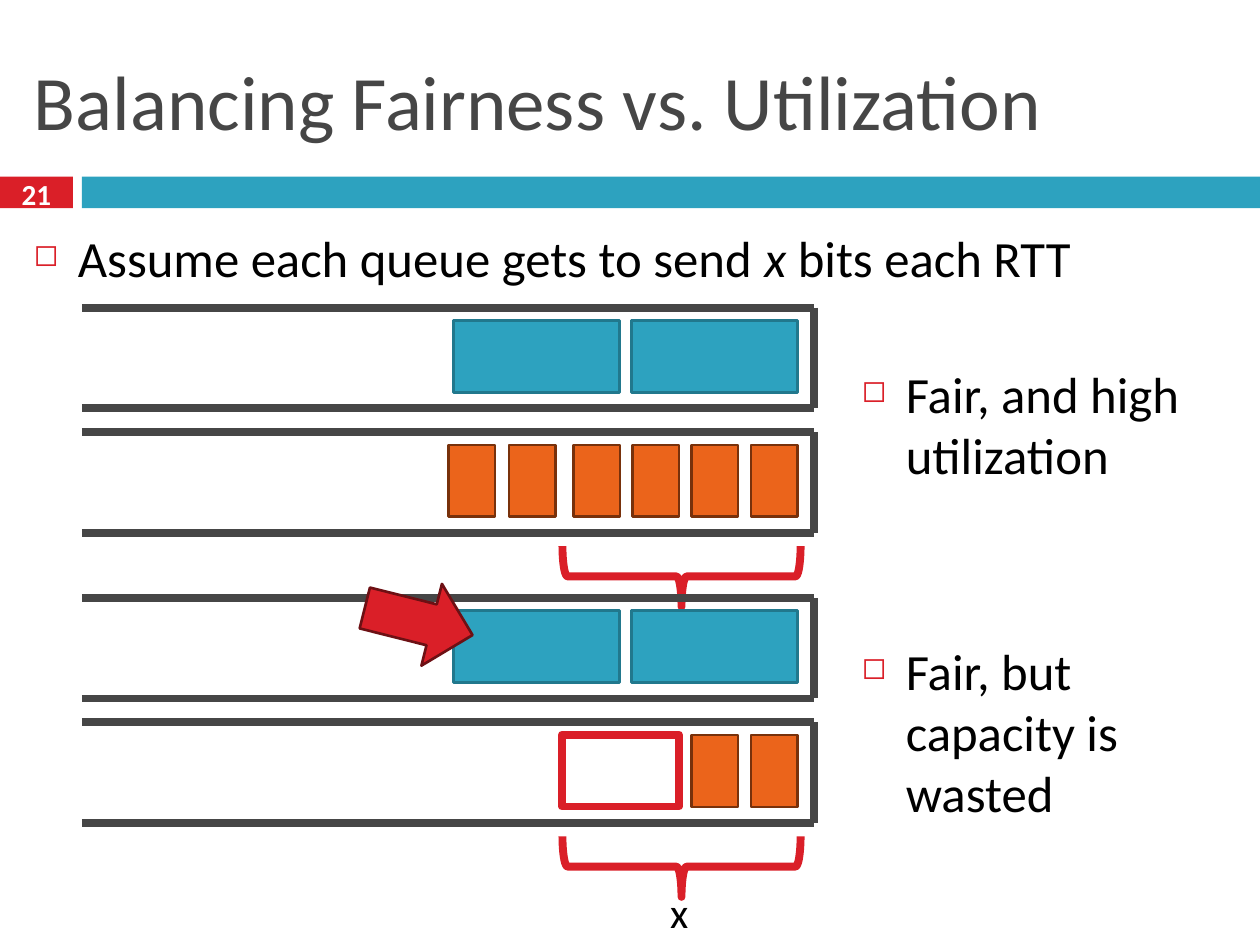
import pptx
import pptx.util
import pptx.dml.color
import pptx.enum.shapes
import pptx.enum.text
import pptx.oxml.ns
import lxml.etree

Cm = pptx.util.Cm
Pt = pptx.util.Pt
RGBColor = pptx.dml.color.RGBColor
SHAPES = pptx.enum.shapes.MSO_SHAPE
ANCHORS = pptx.enum.text.MSO_ANCHOR
qn = pptx.oxml.ns.qn

RED = RGBColor(0xDA, 0x1F, 0x28)
DARK_RED = RGBColor(0x6D, 0x10, 0x14)
TEAL = RGBColor(0x2D, 0xA2, 0xBF)
DARK_TEAL = RGBColor(0x21, 0x78, 0x8D)
ORANGE = RGBColor(0xEB, 0x64, 0x1B)
DARK_ORANGE = RGBColor(0x78, 0x31, 0x0B)
GRAY = RGBColor(0x46, 0x46, 0x46)
BLACK = RGBColor(0, 0, 0)
WHITE = RGBColor(0xFF, 0xFF, 0xFF)

deck = pptx.Presentation()
deck.slide_width = Cm(25.4)
deck.slide_height = Cm(19.05)
page = deck.slides.add_slide(deck.slide_layouts[5])


def write(text, place, box=None, size=29, color=BLACK, bold=None, italic="",
          align="LEFT", anchor="TOP", wrap=True, bullet=False):
    left, top, width, height = map(Cm, place)
    if box is None:
        box = page.shapes.add_textbox(left, top, width, height)
    box.left, box.top, box.width, box.height = left, top, width, height
    frame = box.text_frame
    frame.word_wrap = wrap
    frame.vertical_anchor = ANCHORS[anchor]
    para = frame.paragraphs[0]
    para.alignment = pptx.enum.text.PP_ALIGN[align]
    before, middle, after = text.partition(italic) if italic else (text, "", "")
    for part in filter(None, (before, middle, after)):
        span = para.add_run()
        span.text = part
        span.font.name = "Calibri"
        span.font.size = Pt(size)
        span.font.bold = bold
        span.font.italic = True if part == italic else None
        span.font.color.rgb = color
    if bullet:
        para.space_before = Pt(7)
        props = para._p.get_or_add_pPr()
        props.set("marL", str(Cm(0.89)))
        props.set("indent", str(-Cm(0.89)))
        tint = lxml.etree.SubElement(props, qn("a:buClr"))
        lxml.etree.SubElement(tint, qn("a:srgbClr"), val=str(RED))
        lxml.etree.SubElement(props, qn("a:buSzPct"), val="60000")
        lxml.etree.SubElement(props, qn("a:buChar"), char="◻")


def draw(kind, place, fill=None, line=None, weight=1.5, turn=0):
    shape = page.shapes.add_shape(kind, *map(Cm, place))
    shape.shadow.inherit = False
    shape.rotation = turn
    if fill is None:
        shape.fill.background()
    else:
        shape.fill.solid()
        shape.fill.fore_color.rgb = fill
    if line is None:
        shape.line.fill.background()
    else:
        shape.line.color.rgb = line
        shape.line.width = Pt(weight)


draw(SHAPES.RECTANGLE, (0, 3.56, 1.47, 0.64), fill=RED)
draw(SHAPES.RECTANGLE, (1.65, 3.56, 23.75, 0.64), fill=TEAL)
write("Balancing Fairness vs. Utilization", (0.43, 0.64, 24.56, 2.74),
      box=page.shapes.title, size=44, color=GRAY, anchor="MIDDLE")
write("21", (0, 3.48, 1.47, 0.84), size=16.6, color=WHITE, bold=True,
      align="CENTER", anchor="MIDDLE")
write("Assume each queue gets to send x bits each RTT", (0.43, 4.45, 24.56, 1.85),
      italic="x ", bullet=True)

QUEUE_LEFT, QUEUE_RIGHT, QUEUE_HEIGHT, QUEUE_STEP = 1.65, 16.41, 2.03, 2.51
PACKET_INSET, PACKET_HEIGHT = 0.26, 1.45
LARGE_PACKETS = (3.35, TEAL, DARK_TEAL, (12.73, 9.14))
SMALL_LEFTS = (15.14, 13.94, 12.75, 11.56, 10.26, 9.04)

for scene_top, small_count in ((6.2, 6), (12.05, 2)):
    small_packets = (0.94, ORANGE, DARK_ORANGE, SMALL_LEFTS[:small_count])
    for row, packets in enumerate((LARGE_PACKETS, small_packets)):
        top = scene_top + row * QUEUE_STEP
        bottom = top + QUEUE_HEIGHT
        queue = page.shapes.add_group_shape()
        for ends in ((QUEUE_LEFT, top, QUEUE_RIGHT, top),
                     (QUEUE_LEFT, bottom, QUEUE_RIGHT, bottom),
                     (QUEUE_RIGHT, top, QUEUE_RIGHT, bottom)):
            wall = queue.shapes.add_connector(
                pptx.enum.shapes.MSO_CONNECTOR.STRAIGHT, *map(Cm, ends))
            wall.line.color.rgb = GRAY
            wall.line.width = Pt(4.5)
            lxml.etree.SubElement(wall._element.spPr, qn("a:effectLst"))
        width, fill, edge, lefts = packets
        for left in lefts:
            draw(SHAPES.RECTANGLE, (left, top + PACKET_INSET, width, PACKET_HEIGHT),
                 fill=fill, line=edge)
    draw(SHAPES.LEFT_BRACE, (13.13, scene_top + 3.02, 1.22, 4.8),
         line=RED, weight=4.5, turn=270)
    write("x", (13.26, scene_top + 5.69, 0.94, 1.27), size=24, wrap=False)

draw(SHAPES.RECTANGLE, (11.33, 14.81, 2.36, PACKET_HEIGHT), line=RED, weight=4.5)
draw(SHAPES.RIGHT_ARROW, (7.32, 11.68, 2.24, 1.7), fill=RED, line=DARK_RED, turn=14.1)
write("Fair, and high utilization", (17.12, 7.19, 7.82, 2.79), bullet=True)
write("Fair, but capacity is wasted", (17.12, 12.78, 7.82, 5.31), bullet=True)

deck.save("out.pptx")
